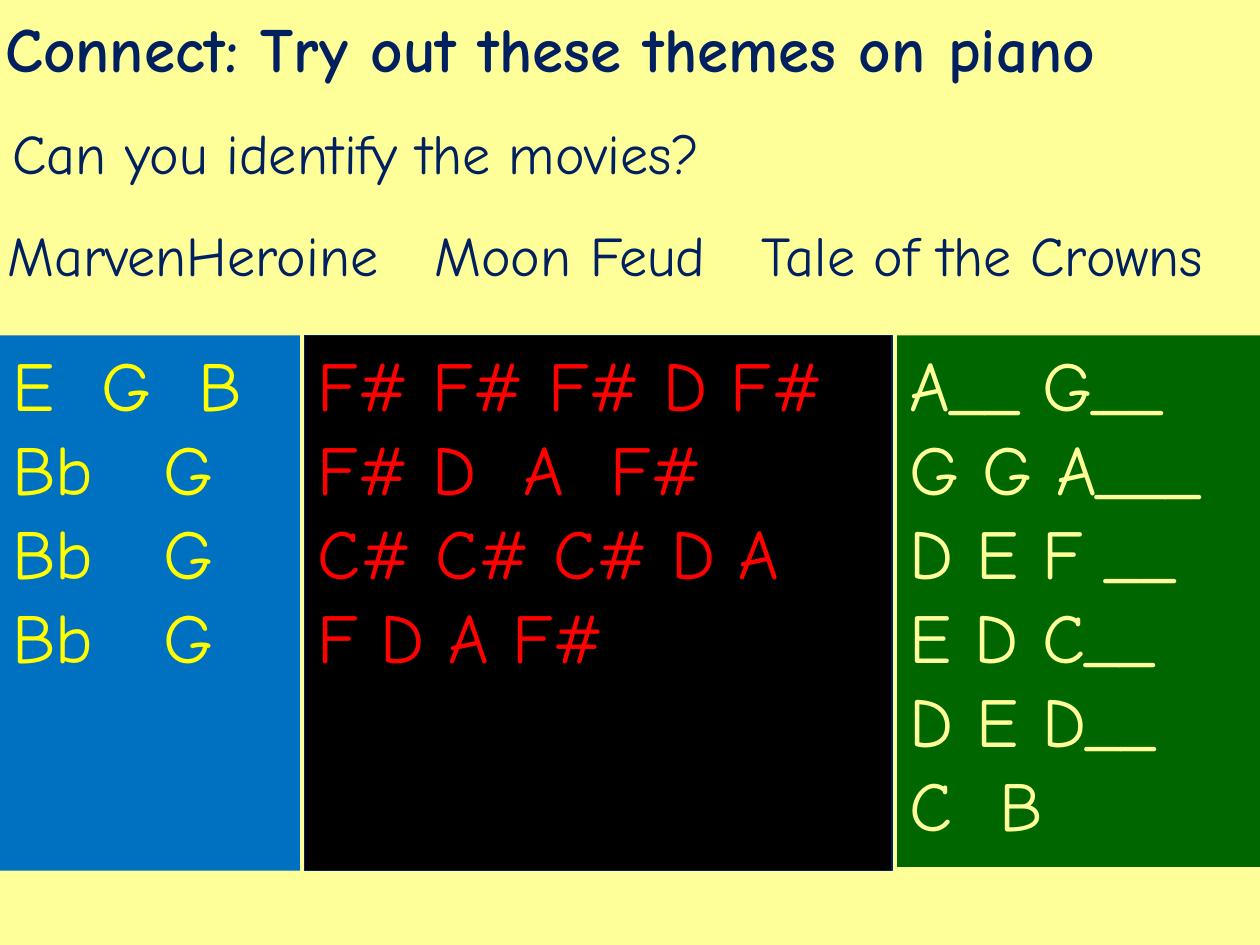
from pptx import Presentation
from pptx.dml.color import RGBColor
from pptx.enum import shapes, text
from pptx.util import Pt

FONT = "Comic Neue"
HEX = {"cream": "FFFF99", "navy": "002060", "blue": "0070C0", "black": "000000",
       "green": "006600", "yellow": "FFFF00", "red": "FF0000"}

# Content
TITLE = "Connect: Try out these themes on piano"
ASK = "Can you identify the movies?"
FILMS = "MarvenHeroine   Moon Feud   Tale of the Crowns"
# Notes, left, width, height, fill, ink, line
THEMES = [
    (["E  G  B", "Bb   G", "Bb   G", "Bb   G"],
     0, 171.4, 306, "blue", "yellow", None),
    (["F# F# F# D F#", "F# D  A  F#", "C# C# C# D A", "F D A F#"],
     174.2, 335.5, 306, "black", "red", "navy"),
    (["A__ G__", "G G A___", "D E F __", "E D C__", "D E D__", "C  B"],
     512.6, 210.2, 303.8, "green", "cream", None),
]
TOP = 191.6


def color(name):
    return RGBColor.from_string(HEX[name])


def add(slide, lines, box, size, ink="navy", bold=False, mid=False,
        gap=None, fill=None, edge=None):
    place = [Pt(n) for n in box]
    if fill:
        part = slide.shapes.add_shape(shapes.MSO_SHAPE.RECTANGLE, *place)
        part.shadow.inherit = False
        part.fill.solid()
        part.fill.fore_color.rgb = color(fill)
        if edge:
            part.line.color.rgb = color(edge)
            part.line.width = Pt(0.75)
        else:
            part.line.fill.background()
    else:
        part = slide.shapes.add_textbox(*place)
    frame = part.text_frame
    frame.word_wrap = True
    frame.vertical_anchor = text.MSO_ANCHOR.MIDDLE if mid else text.MSO_ANCHOR.TOP
    frame.text = "\n".join(lines)
    for para in frame.paragraphs:
        para.alignment = text.PP_ALIGN.LEFT
        para.line_spacing = gap
        font = para.runs[0].font
        font.name, font.size, font.bold = FONT, Pt(size), bold
        font.color.rgb = color(ink)
    return part


deck = Presentation()
deck.slide_width, deck.slide_height = Pt(720), Pt(540)
page = deck.slides.add_slide(deck.slide_layouts[6])
page.background.fill.solid()
page.background.fill.fore_color.rgb = color("cream")

# Heading
add(page, [TITLE], (-4, 1.4, 720, 56.9), 36, bold=True, mid=True, gap=0.9)

# Theme panels
for notes, left, wide, high, fill, ink, edge in THEMES:
    add(page, notes, (left, TOP, wide, high), 40, ink=ink, fill=fill, edge=edge)

# Question and film names
add(page, [ASK], (0, 64.1, 661.7, 46.1), 32)
add(page, [FILMS], (-2.9, 119, 720, 56.9), 32, mid=True, gap=0.9,
    fill="cream", edge="cream")

deck.save("out.pptx")
